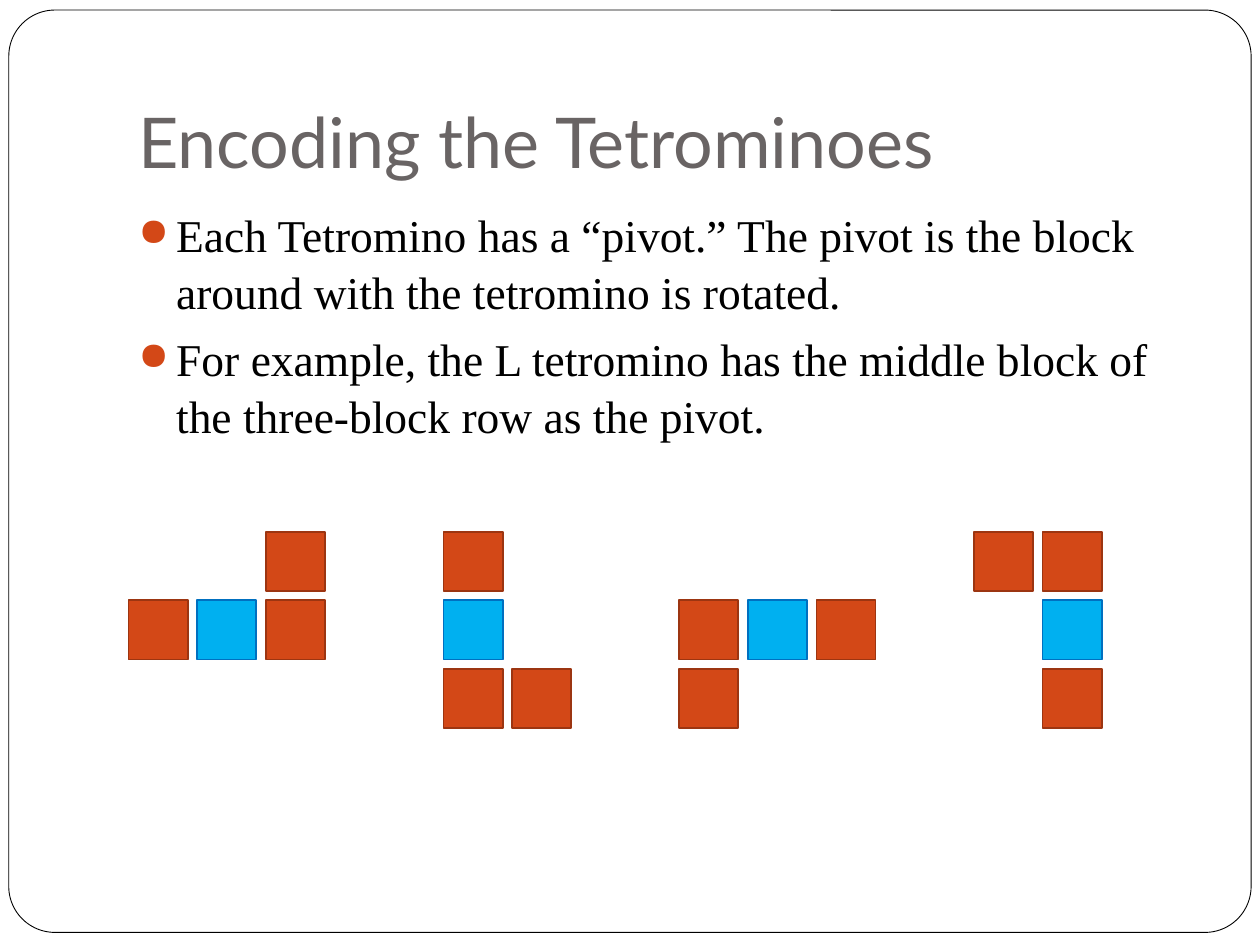
"""Build the slide on tetromino pivots, with four rotations of the L piece."""
from lxml.etree import SubElement
from pptx import Presentation
from pptx.dml.color import RGBColor as RGB
from pptx.enum.shapes import MSO_SHAPE as SHAPE
from pptx.enum.text import MSO_ANCHOR as ANCHOR
from pptx.oxml.ns import qn
from pptx.util import Inches, Pt

TITLE = "Encoding the Tetrominoes"
BULLETS = [
    "Each Tetromino has a “pivot.” The pivot is the block around with the tetromino is rotated.",
    "For example, the L tetromino has the middle block of the three-block row as the pivot.",
]
ROTATIONS = [
    (1.02, ["..#", "#O#"]),
    (3.52, ["#.", "O.", "##"]),
    (5.39, ["...", "#O#", "#.."]),
    (7.73, ["##", ".O", ".#"]),
]
THEME = {
    "title": {"name": "Lato", "size": Pt(40), "color": "696464"},
    "body": {"name": "Times New Roman", "size": Pt(26), "color": "000000"},
    "frame": ("FFFFFF", "000000", 0.5),
    "#": ("D34817", "9C3511", 1),
    "O": ("00B0F0", "0070C0", 1),
    "bullet": "D34817",
}
GRID_TOP, BLOCK, PITCH = 4.22, 0.47, 0.545


def add_box(s, kind, at, style):
    fill, line, width = THEME[style]
    sp = s.shapes.add_shape(kind, *map(Inches, at))
    sp.shadow.inherit = False
    sp.fill.solid()
    sp.fill.fore_color.rgb = RGB.from_string(fill)
    sp.line.color.rgb = RGB.from_string(line)
    sp.line.width = Pt(width)
    return sp


def add_text(s, at, lines, style, anchor):
    tf = s.shapes.add_textbox(*map(Inches, at)).text_frame
    tf.word_wrap = True
    tf.vertical_anchor = anchor
    for i, line in enumerate(lines):
        p = tf.paragraphs[0] if i == 0 else tf.add_paragraph()
        r = p.add_run()
        r.text = line
        for key, value in THEME[style].items():
            if key == "color":
                r.font.color.rgb = RGB.from_string(value)
            else:
                setattr(r.font, key, value)
    return tf


def add_bullet(p):
    p.space_before = Pt(5.8)
    p.line_spacing = 1.04
    pPr = p._p.get_or_add_pPr()
    pPr.set("marL", str(Inches(0.3)))
    pPr.set("indent", str(-Inches(0.3)))
    color = SubElement(pPr, qn("a:buClr"))
    SubElement(color, qn("a:srgbClr")).set("val", THEME["bullet"])
    SubElement(pPr, qn("a:buSzPct")).set("val", "85000")
    SubElement(pPr, qn("a:buChar")).set("char", "●")


def main():
    prs = Presentation()
    prs.slide_width, prs.slide_height = Inches(10), Inches(7.5)
    s = prs.slides.add_slide(prs.slide_layouts[6])

    frame = add_box(s, SHAPE.ROUNDED_RECTANGLE, (0.07, 0.08, 9.86, 7.32), "frame")
    frame.adjustments[0] = 0.05

    title = add_text(s, (1, 0.3, 8.5, 1.25), [TITLE], "title", ANCHOR.BOTTOM)
    title.margin_bottom = Inches(0.1)
    body = add_text(s, (1, 1.58, 8.5, 5), BULLETS, "body", ANCHOR.TOP)
    for p in body.paragraphs:
        add_bullet(p)

    for left, rows in ROTATIONS:
        for i, row in enumerate(rows):
            for j, cell in enumerate(row):
                if cell != ".":
                    at = (left + j * PITCH, GRID_TOP + i * PITCH, BLOCK, BLOCK)
                    add_box(s, SHAPE.RECTANGLE, at, cell)

    prs.save("out.pptx")


if __name__ == "__main__":
    main()
